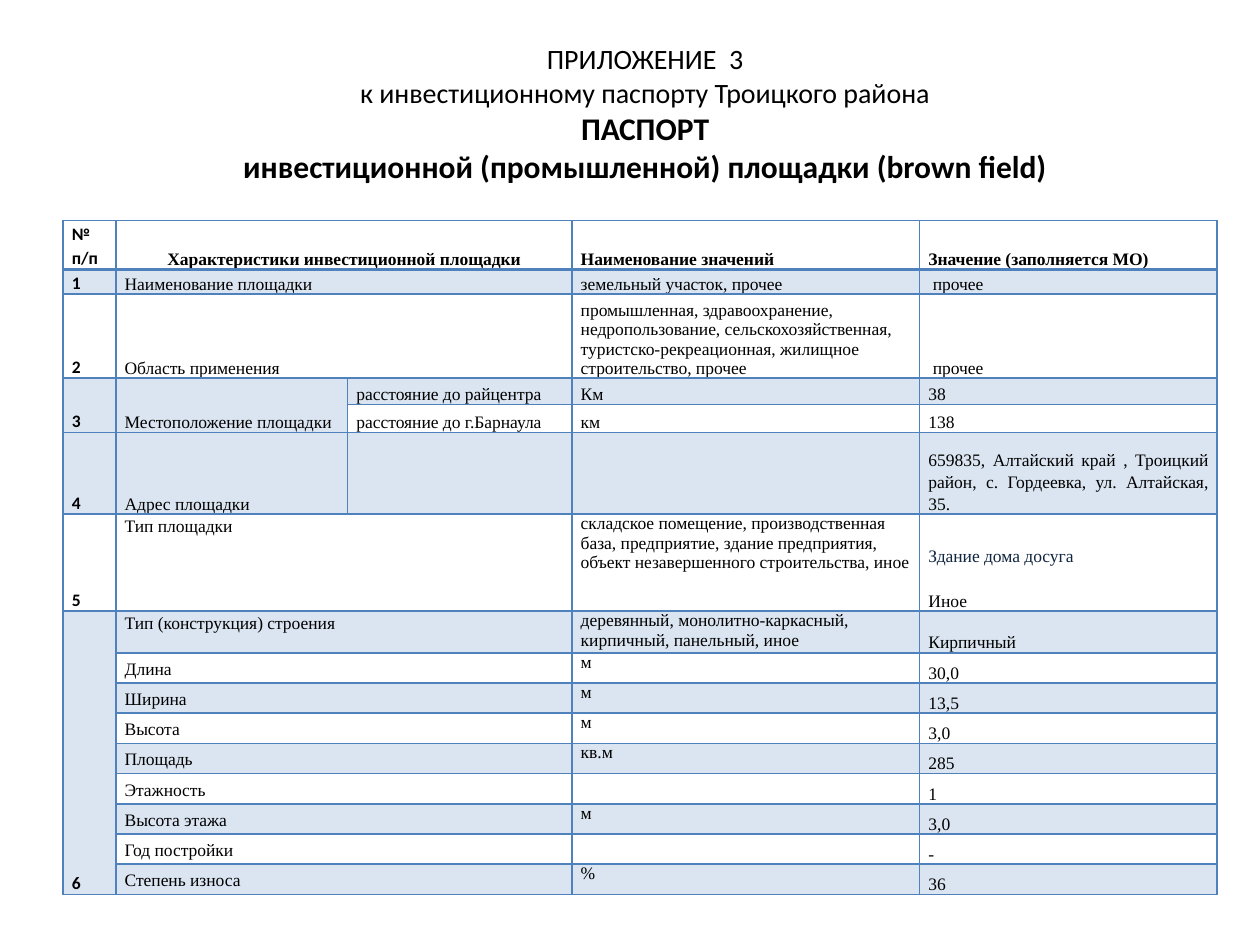
from lxml import etree
from pptx import Presentation
from pptx.dml.color import RGBColor
from pptx.enum import text
from pptx.oxml import parse_xml
from pptx.oxml.ns import qn
from pptx.util import Pt

PX = 9144  # 100 px to the inch
INK = {"text": "000000", "navy": "10253F", "blue": "4F81BD"}
NS = "http://schemas.openxmlformats.org/drawingml/2006/main"
ALIGN, ANCHOR = text.PP_ALIGN, text.MSO_ANCHOR


def style(par, face, size, bold, align, space=1.0, ink="text"):
    par.font.name = face
    par.font.size = Pt(size)
    par.font.bold = bold
    par.font.color.rgb = RGBColor.from_string(INK[ink])
    par.alignment = align
    par.line_spacing = space
    par.space_before = Pt(0)


def edge(cell, side, width):
    """Draw one border of a cell; call before the cell is filled."""
    cell._tc.get_or_add_tcPr().append(parse_xml(
        f'<a:{side} xmlns:a="{NS}" w="{Pt(width)}"><a:solidFill>'
        f'<a:srgbClr val="{INK["blue"]}"/></a:solidFill></a:{side}>'))


prs = Presentation()
prs.slide_width, prs.slide_height = 1000 * PX, 750 * PX
slide = prs.slides.add_slide(prs.slide_layouts[5])

# Title
title = slide.shapes.title
title.left, title.top, title.width, title.height = (
    n * PX for n in (67, 28, 890, 125))
frame = title.text_frame
frame.word_wrap = True
frame.auto_size = text.MSO_AUTO_SIZE.NONE
frame.vertical_anchor = ANCHOR.TOP
heads = [
    ("ПРИЛОЖЕНИЕ  3\nк инвестиционному паспорту Троицкого района", 16, False),
    ("ПАСПОРТ", 18, True),
    ("инвестиционной (промышленной) площадки (brown field)", 18, True),
]
for i, (words, size, bold) in enumerate(heads):
    par = frame.add_paragraph() if i else frame.paragraphs[0]
    par.text = words
    style(par, "Calibri", size, bold, ALIGN.CENTER)

# Table: number, feature, detail, options, value
rows = [
    ("№ п/п", "Характеристики инвестиционной площадки", "",
     "Наименование значений", "Значение (заполняется МО)"),
    ("1", "Наименование площадки", "", "земельный участок, прочее", " прочее"),
    ("2", "Область применения", "",
     "промышленная, здравоохранение, недропользование, сельскохозяйственная, "
     "туристско-рекреационная, жилищное строительство, прочее", " прочее"),
    ("3", "Местоположение площадки", "расстояние до райцентра", "Км", "38"),
    ("", "", "расстояние до г.Барнаула", "км", "138"),
    ("4", "Адрес площадки", "", "",
     "659835, Алтайский край , Троицкий район, с. Гордеевка, "
     "ул. Алтайская, 35."),
    ("5", "Тип площадки", "",
     "складское помещение, производственная база, предприятие, здание "
     "предприятия, объект незавершенного строительства, иное",
     "Здание дома досуга\nИное"),
    ("6", "Тип (конструкция) строения", "",
     "деревянный, монолитно-каркасный, кирпичный, панельный, иное",
     "Кирпичный"),
    ("", "Длина", "", "м", "30,0"),
    ("", "Ширина", "", "м", "13,5"),
    ("", "Высота", "", "м", "3,0"),
    ("", "Площадь", "", "кв.м", "285"),
    ("", "Этажность", "", "", "1"),
    ("", "Высота этажа", "", "м", "3,0"),
    ("", "Год постройки", "", "", "-"),
    ("", "Степень износа", "", "%", "36"),
]
wides = [42, 184, 178, 276, 236]
highs = [38, 19, 67, 21, 22, 65, 77, 33] + [24] * 8
table = slide.shapes.add_table(len(rows), len(wides), 50 * PX, 175 * PX,
                               sum(wides) * PX, sum(highs) * PX).table
table.first_row = table.horz_banding = False
for col, wide in zip(table.columns, wides):
    col.width = wide * PX
for row, high in zip(table.rows, highs):
    row.height = high * PX

for r, row in enumerate(rows):
    for c, words in enumerate(row):
        cell = table.cell(r, c)
        cell.margin_left = cell.margin_right = 7 * PX
        cell.margin_top = cell.margin_bottom = 0
        if r > 5 and c in (1, 3):
            mid = c == 1 and r > 7
            cell.vertical_anchor = ANCHOR.MIDDLE if mid else ANCHOR.TOP
        else:
            cell.vertical_anchor = ANCHOR.BOTTOM

        cell.text = words
        align = ALIGN.JUSTIFY if c in (0, 4) else ALIGN.LEFT
        if (r, c) == (0, 1):
            align = ALIGN.CENTER
        face = "Calibri" if c == 0 else "Times New Roman"
        tight = c == 3 or (c == 4 and r > 6)
        for par in cell.text_frame.paragraphs:
            style(par, face, 10, r == 0 or c == 0, align, 1 if tight else 1.15)
            if not words:
                etree.SubElement(par._p, qn("a:endParaRPr"), sz="1000")

        for side in ("lnL", "lnR", "lnT", "lnB"):
            thick = (r, side) in ((0, "lnB"), (1, "lnT"))
            edge(cell, side, 2 if thick else 1)
        if r % 2:
            cell.fill.solid()
            cell.fill.fore_color.rgb = RGBColor.from_string(INK["blue"])
            tint = cell._tc.tcPr.find(".//" + qn("a:solidFill") + "[last()]")
            tint = cell._tc.tcPr.findall(qn("a:solidFill"))[0][0]
            etree.SubElement(tint, qn("a:alpha"), val="20000")
        else:
            cell.fill.background()

# The building type has two values, set apart
first, last = table.cell(6, 4).text_frame.paragraphs
first.font.color.rgb = RGBColor.from_string(INK["navy"])
last.space_before = Pt(13)

for r in range(len(rows)):
    if r not in (3, 4, 5):
        table.cell(r, 1).merge(table.cell(r, 2))
for top, end, c in ((3, 4, 0), (3, 4, 1), (7, 15, 0)):
    table.cell(top, c).merge(table.cell(end, c))

prs.save("out.pptx")
